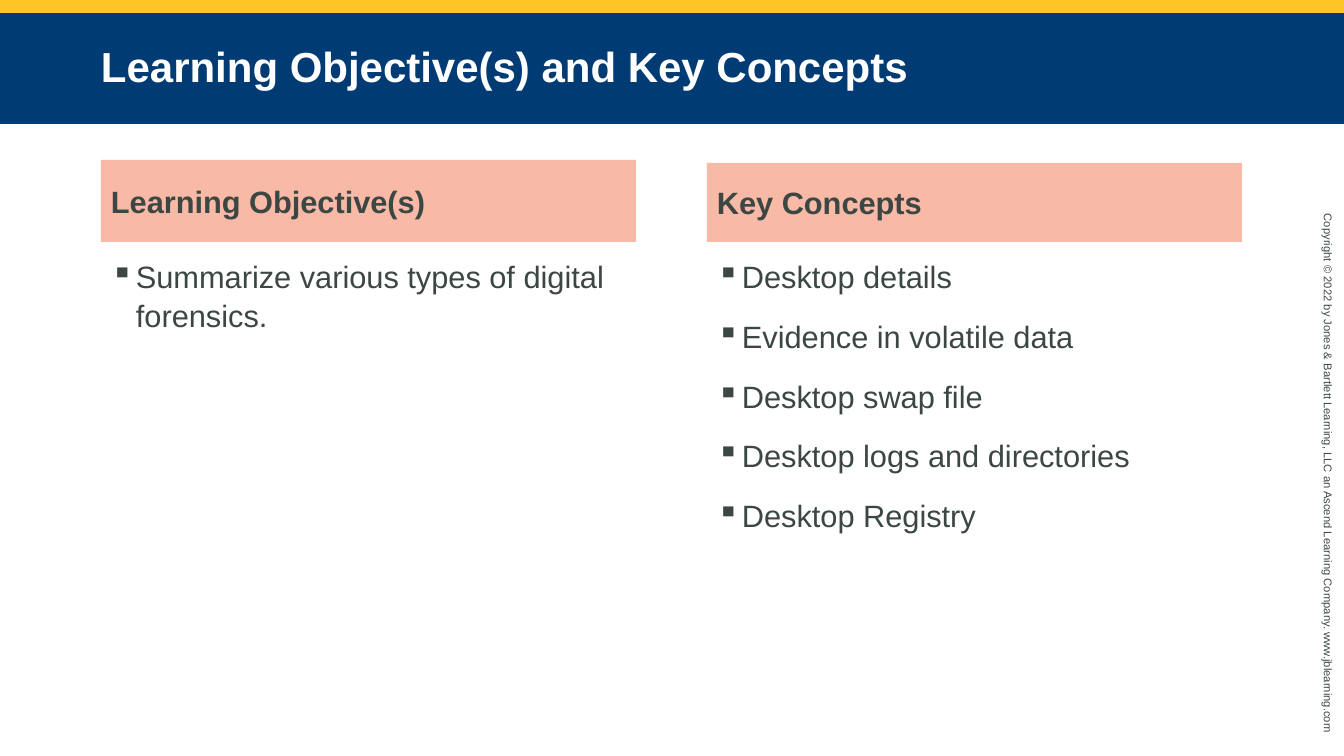
import pptx
import pptx.util
import pptx.dml.color
import pptx.enum.shapes
import pptx.enum.text
import pptx.oxml.ns
import lxml.etree

SCALE = 914400 / 100.8
FONT = "Arial"
HUES = {"gold": "FFC425", "navy": "003B74", "peach": "F9B9A7",
        "ink": "3C4743", "white": "FFFFFF"}
GOALS = ["Summarize various types of digital forensics."]
TOPICS = ["Desktop details", "Evidence in volatile data", "Desktop swap file",
          "Desktop logs and directories", "Desktop Registry"]


def px(num):
    return pptx.util.Emu(round(num * SCALE))


def hue(name):
    return pptx.dml.color.RGBColor.from_string(HUES[name])


def paint(shape, name):
    shape.fill.solid()
    shape.fill.fore_color.rgb = hue(name)
    shape.line.fill.background()


def write(par, text, size, tint="ink", bold=False):
    par.alignment = pptx.enum.text.PP_ALIGN.LEFT
    run = par.add_run()
    run.text = text
    run.font.name = FONT
    run.font.size = pptx.util.Pt(size)
    run.font.bold = bold
    run.font.color.rgb = hue(tint)


def bar(slide, left, top, width, height, tint):
    shape = slide.shapes.add_shape(
        pptx.enum.shapes.MSO_SHAPE.RECTANGLE,
        px(left), px(top), px(width), px(height))
    shape.shadow.inherit = False
    paint(shape, tint)
    return shape


def box(slide, left, top, width, height):
    shape = slide.shapes.add_textbox(px(left), px(top), px(width), px(height))
    shape.text_frame.word_wrap = True
    return shape


def title(slide, text):
    shape = slide.shapes.title
    shape.left, shape.top = px(0), px(13)
    shape.width, shape.height = px(1344), px(111)
    paint(shape, "navy")
    frame = shape.text_frame
    frame.auto_size = pptx.enum.text.MSO_AUTO_SIZE.NONE
    frame.vertical_anchor = pptx.enum.text.MSO_ANCHOR.MIDDLE
    frame.margin_left = frame.margin_right = px(101)
    frame.margin_top = frame.margin_bottom = px(5)
    par = frame.paragraphs[0]
    par.line_spacing = 0.95
    write(par, text, 30, "white", True)


def bullet(par):
    props = par._p.get_or_add_pPr()
    props.set("marL", str(px(25)))
    props.set("indent", str(-px(25)))
    mark = lxml.etree.SubElement(props, pptx.oxml.ns.qn("a:buChar"))
    mark.set("char", "▪")


def column(slide, left, top, head, items):
    base = 242
    frame = bar(slide, left, top, 535, base - top, "peach").text_frame
    frame.word_wrap = True
    frame.vertical_anchor = pptx.enum.text.MSO_ANCHOR.MIDDLE
    write(frame.paragraphs[0], head, 22, bold=True)
    frame = box(slide, left, 251, 535, 431).text_frame
    for rank, item in enumerate(items):
        par = frame.add_paragraph() if rank else frame.paragraphs[0]
        bullet(par)
        par.line_spacing = 1.05
        if rank:
            par.space_before = pptx.util.Pt(15)
        write(par, item, 22)


def notice(slide, text):
    shape = box(slide, 1052, 468, 552, 24)
    shape.rotation = 90
    write(shape.text_frame.paragraphs[0], text, 8)


def main():
    deck = pptx.Presentation()
    deck.slide_width, deck.slide_height = px(1344), px(756)
    slide = deck.slides.add_slide(deck.slide_layouts[5])
    bar(slide, 0, 0, 1344, 13, "gold")
    title(slide, "Learning Objective(s) and Key Concepts")
    column(slide, 101, 160, "Learning Objective(s)", GOALS)
    column(slide, 707, 163, "Key Concepts", TOPICS)
    notice(slide, "Copyright © 2022 by Jones & Bartlett Learning, LLC "
                  "an Ascend Learning Company. www.jblearning.com")
    deck.save("out.pptx")


if __name__ == "__main__":
    main()
